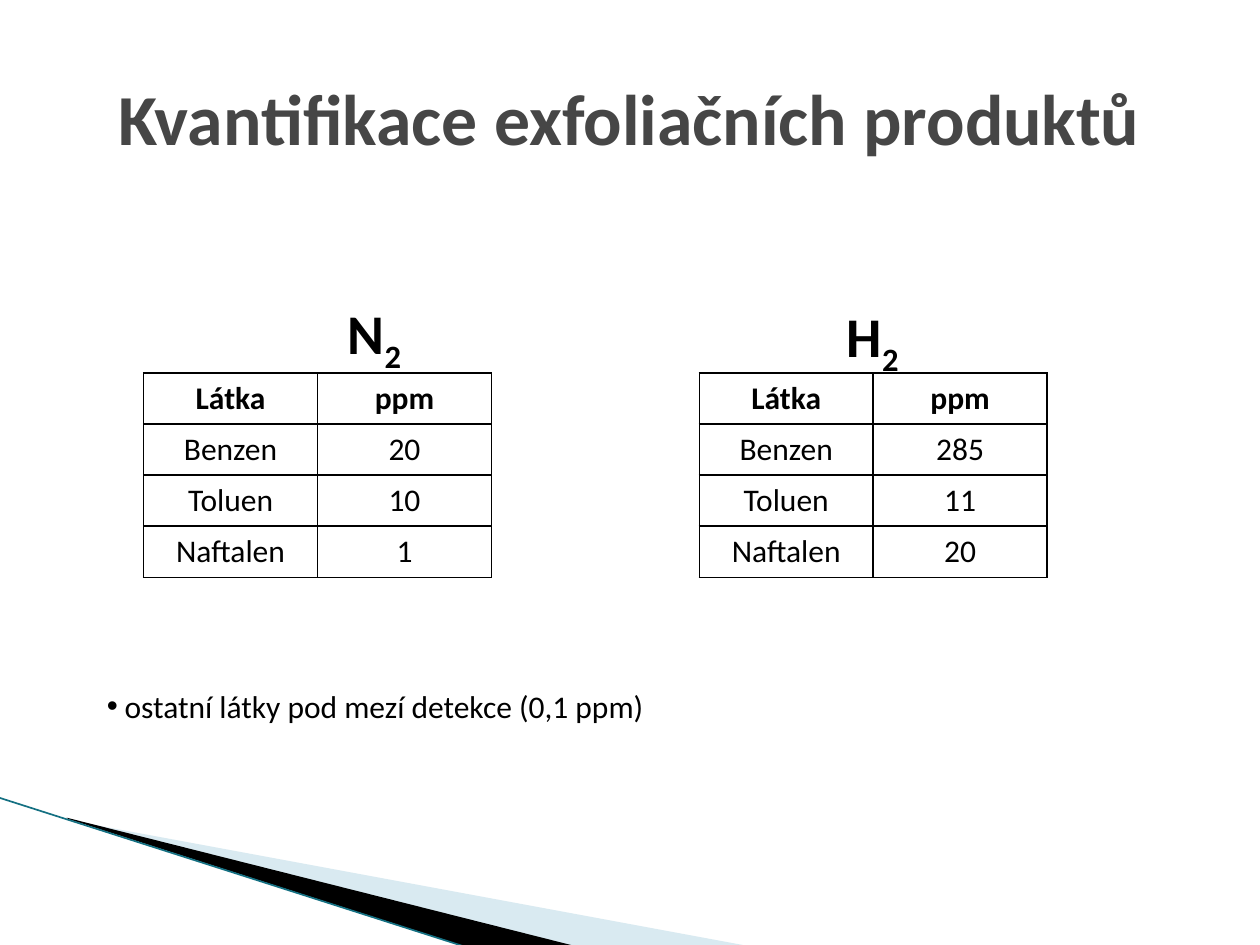
import pptx
import pptx.dml.color
import pptx.enum.shapes
import pptx.enum.text
import pptx.oxml
import pptx.oxml.ns
import pptx.util
from dataclasses import dataclass

Inches = pptx.util.Inches
Pt = pptx.util.Pt
RGB = pptx.dml.color.RGBColor.from_string
NONE = pptx.enum.text.MSO_AUTO_SIZE.NONE
CENTER = pptx.enum.text.PP_ALIGN.CENTER


@dataclass
class Theme:
    font: str = "Calibri"
    title: str = "464646"
    ink: str = "000000"
    paper: str = "FFFFFF"
    pale: str = "A0CBDC"
    teal: str = "147082"
    title_size: int = 41
    gas_size: int = 32
    text_size: int = 18


theme = Theme()


def add_xml(parent, xml):
    """Append a DrawingML element and return it."""
    element = pptx.oxml.parse_xml(xml.replace(" ", f" {pptx.oxml.ns.nsdecls('a')} ", 1))
    parent.append(element)
    return element


def style(paragraph, size, color=theme.ink, bold=False):
    font = paragraph.font
    font.name, font.size, font.bold = theme.font, Pt(size), bold
    font.color.rgb = RGB(color)


deck = pptx.Presentation()
deck.slide_width, deck.slide_height = Inches(10), Inches(7.5)
page = deck.slides.add_slide(deck.slide_layouts[1])

# Corner wedges and their edge line
wedges = [
    (theme.pale, 40, [(0.55, 6.51), (5.95, 7.51), (4.56, 7.51), (0.55, 6.5)]),
    (theme.ink, 100, [(0.53, 6.49), (4.57, 7.51), (3.72, 7.52), (0.54, 6.5)]),
]
for color, opacity, points in wedges:
    corners = [(Inches(x), Inches(y)) for x, y in points]
    builder = page.shapes.build_freeform(*corners[0])
    builder.add_line_segments(corners[1:], close=True)
    wedge = builder.convert_to_shape()
    wedge.shadow.inherit = False
    wedge.line.fill.background()
    wedge.fill.solid()
    wedge.fill.fore_color.rgb = RGB(color)
    if opacity < 100:
        tint = wedge._element.spPr.find(".//" + pptx.oxml.ns.qn("a:srgbClr"))
        add_xml(tint, f'<a:alpha val="{opacity * 1000}"/>'.replace("<a:alpha", "<a:alpha "))

edge = page.shapes.add_connector(
    pptx.enum.shapes.MSO_CONNECTOR.STRAIGHT,
    Inches(-0.01), Inches(6.33), Inches(3.71), Inches(7.52))
edge.line.color.rgb = RGB(theme.teal)
edge.line.width = Pt(0.95)
add_xml(edge._element.spPr, "<a:effectLst />")

# Title
title = page.shapes.title
title.left, title.top, title.width, title.height = map(Inches, (0.5, 0.3, 9, 1.25))
title.text_frame.text = "Kvantifikace exfoliačních produktů"
title.text_frame.auto_size = NONE
title.text_frame.vertical_anchor = pptx.enum.text.MSO_ANCHOR.MIDDLE
title.text_frame.paragraphs[0].alignment = CENTER
style(title.text_frame.paragraphs[0], theme.title_size, theme.title, True)

# Gas labels above the tables
nitrogen = page.placeholders[1]
nitrogen.left, nitrogen.top, nitrogen.width, nitrogen.height = map(
    Inches, (0.89, 1.7, 3.4, 2.13))
hydrogen = page.shapes.add_textbox(*map(Inches, (5.87, 2.26, 3.46, 0.71)))
for box, symbol, inset_left, inset_top in [
    (nitrogen, "N", 1.87, 0.67),
    (hydrogen, "H", 0.85, 0.13),
]:
    frame = box.text_frame
    frame.word_wrap = True
    frame.auto_size = NONE
    frame.margin_left, frame.margin_top = Inches(inset_left), Inches(inset_top)
    paragraph = frame.paragraphs[0]
    properties = paragraph._p.get_or_add_pPr()
    properties.set("marL", "0")
    properties.set("indent", "0")
    add_xml(properties, "<a:buNone />")
    paragraph.space_before = Pt(0)
    style(paragraph, theme.gas_size, bold=True)
    paragraph.add_run().text = symbol
    subscript = paragraph.add_run()
    subscript.text = "2"
    subscript._r.get_or_add_rPr().set("baseline", "-25000")

# Concentration tables
substances = ["Benzen", "Toluen", "Naftalen"]
for left, amounts in [(1.14, [20, 10, 1]), (5.55, [285, 11, 20])]:
    rows = [("Látka", "ppm"), *zip(substances, amounts)]
    table = page.shapes.add_table(
        len(rows), 2, Inches(left), Inches(2.96), Inches(2.76), Inches(1.6)).table
    for row, values in enumerate(rows):
        for column, value in enumerate(values):
            cell = table.cell(row, column)
            cell.text = str(value)
            paragraph = cell.text_frame.paragraphs[0]
            paragraph.alignment = CENTER
            style(paragraph, theme.text_size, bold=row == 0)
            borders = cell._tc.get_or_add_tcPr()
            for side in ("lnL", "lnR", "lnT", "lnB"):
                add_xml(borders, f'<a:{side} w="{Pt(1)}"><a:solidFill>'
                                 f'<a:srgbClr val="{theme.ink}"/></a:solidFill></a:{side}>')
            cell.fill.solid()
            cell.fill.fore_color.rgb = RGB(theme.paper)

# Detection limit remark
remark = page.shapes.add_textbox(*map(Inches, (0.75, 5.4, 4.52, 0.4)))
remark.text_frame.word_wrap = False
remark.text_frame.text = "ostatní látky pod mezí detekce (0,1 ppm)"
paragraph = remark.text_frame.paragraphs[0]
properties = paragraph._p.get_or_add_pPr()
properties.set("marL", str(Inches(0.14)))
properties.set("indent", str(Inches(-0.14)))
add_xml(properties, '<a:buFont typeface="Arial"/>')
add_xml(properties, '<a:buChar char="•"/>')
style(paragraph, theme.text_size)

deck.save("out.pptx")
